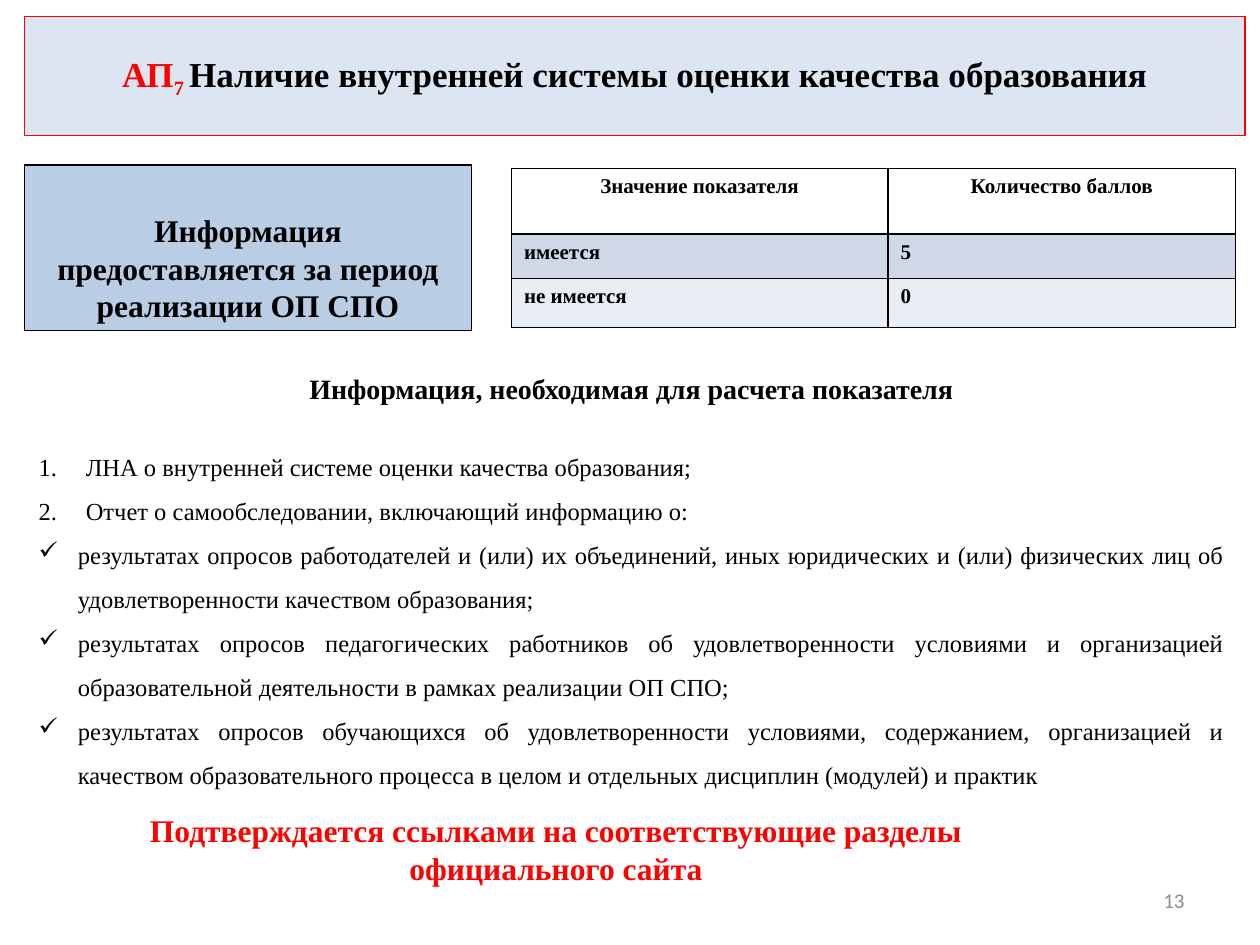
from dataclasses import dataclass
from typing import Any

from lxml import etree
from pptx import Presentation
from pptx import util as u
from pptx.dml.color import RGBColor
from pptx.enum import shapes, text
from pptx.oxml.ns import qn

LEFT, CENTER, RIGHT, JUSTIFY = (
    text.PP_ALIGN.LEFT, text.PP_ALIGN.CENTER, text.PP_ALIGN.RIGHT, text.PP_ALIGN.JUSTIFY)
TOP, MIDDLE, BOTTOM = (
    text.MSO_ANCHOR.TOP, text.MSO_ANCHOR.MIDDLE, text.MSO_ANCHOR.BOTTOM)
BLACK, RED = "000000", "FF0000"


def rgb(value):
    return RGBColor.from_string(value)


def write(p, words, *, size=14, bold=False, color=BLACK, font="Times New Roman",
          align=LEFT, baseline=None):
    """Add one formatted run to a paragraph; baseline is in percent."""
    p.alignment = align
    r = p.add_run()
    r.text = words
    r.font.size, r.font.bold, r.font.name = u.Pt(size), bold, font
    r.font.color.rgb = rgb(color)
    if baseline:
        r.font._element.set("baseline", str(baseline * 1000))


def add_bullet(p, mark, indent):
    """Hang the paragraph by indent cm; without a mark it is numbered."""
    pPr = p._p.get_or_add_pPr()
    pPr.set("marL", str(u.Cm(indent)))
    pPr.set("indent", str(-u.Cm(indent)))
    if mark:
        etree.SubElement(pPr, qn("a:buChar")).set("char", mark)
    else:
        etree.SubElement(pPr, qn("a:buAutoNum")).set("type", "arabicPeriod")


def add_borders(cell, color, width):
    tcPr = cell._tc.get_or_add_tcPr()
    for side in ("lnL", "lnR", "lnT", "lnB"):
        ln = etree.SubElement(tcPr, qn(f"a:{side}"))
        ln.set("w", str(u.Pt(width)))
        fill = etree.SubElement(ln, qn("a:solidFill"))
        etree.SubElement(fill, qn("a:srgbClr")).set("val", color)


def place(sp, box):
    sp.left, sp.top, sp.width, sp.height = (u.Cm(n) for n in box)


def set_frame(sp, anchor):
    tf = sp.text_frame
    tf.word_wrap = True
    tf.auto_size = text.MSO_AUTO_SIZE.NONE
    tf.vertical_anchor = anchor
    return tf


@dataclass
class SlideBuilder:
    s: Any
    line_width: float = 0.75
    list_size: int = 14
    list_spacing: float = 1.5

    def paint(self, sp, fill, line):
        sp.fill.solid()
        sp.fill.fore_color.rgb = rgb(fill)
        sp.line.color.rgb = rgb(line)
        sp.line.width = u.Pt(self.line_width)

    def title(self, box, fill, line, runs):
        sp = self.s.shapes.title
        place(sp, box)
        self.paint(sp, fill, line)
        p = set_frame(sp, MIDDLE).paragraphs[0]
        for words, fmt in runs:
            write(p, words, size=20, bold=True, align=CENTER, **fmt)

    def panel(self, box, fill, line, words, **fmt):
        sp = self.s.shapes.add_shape(
            shapes.MSO_SHAPE.RECTANGLE, *(u.Cm(n) for n in box))
        sp.shadow.inherit = False
        self.paint(sp, fill, line)
        write(set_frame(sp, BOTTOM).paragraphs[0], words, **fmt)

    def label(self, box, words, anchor=TOP, **fmt):
        sp = self.s.shapes.add_textbox(*(u.Cm(n) for n in box))
        tf = set_frame(sp, anchor)
        write(tf.paragraphs[0], words, **fmt)
        return tf

    def bullets(self, tf, items, indent, mark=None):
        for item in items:
            p = tf.add_paragraph()
            add_bullet(p, mark, indent)
            p.line_spacing = self.list_spacing
            write(p, item, size=self.list_size, align=JUSTIFY)

    def table(self, box, widths, heights, rows, fills):
        table = self.s.shapes.add_table(
            len(rows), len(widths), *(u.Cm(n) for n in box)).table
        for column, width in zip(table.columns, widths):
            column.width = u.Cm(width)
        for i, (row, values) in enumerate(zip(table.rows, rows)):
            row.height = u.Cm(heights[i])
            for cell, value in zip(row.cells, values):
                add_borders(cell, BLACK, 1)
                cell.fill.solid()
                cell.fill.fore_color.rgb = rgb(fills[i])
                write(cell.text_frame.paragraphs[0], value, size=12, bold=True,
                      align=LEFT if i else CENTER)


def main():
    prs = Presentation()
    prs.slide_width, prs.slide_height = u.Cm(25.4), u.Cm(19.05)
    slide = SlideBuilder(prs.slides.add_slide(prs.slide_layouts[5]))

    slide.title((0.5, 0.33, 24.6, 2.4), "DCE6F2", RED, [
        ("АП", {"color": RED}),
        ("7 ", {"color": RED, "baseline": -25}),
        ("Наличие внутренней системы оценки качества образования", {}),
    ])
    slide.panel((0.5, 3.33, 9, 3.33), "B9CDE5", BLACK,
                "Информация предоставляется за период реализации ОП СПО",
                size=18, bold=True, align=CENTER)
    slide.table((10.31, 3.4, 14.6, 3.2), (7.59, 7.01), (1.32, 0.89, 0.99),
                [("Значение показателя", "Количество баллов"),
                 ("имеется", "5"),
                 ("не имеется", "0")],
                ("FFFFFF", "D0D8E8", "E9EDF4"))

    tf = slide.label((0.53, 7.37, 24.4, 9.27),
                     "Информация, необходимая для расчета показателя",
                     size=16, bold=True, align=CENTER)
    tf.paragraphs[0].space_after = u.Pt(18)
    slide.bullets(tf, [
        "ЛНА о внутренней системе оценки качества образования;",
        "Отчет о самообследовании, включающий информацию о:",
    ], indent=0.95)
    slide.bullets(tf, [
        "результатах опросов работодателей и (или) их объединений, иных юридических "
        "и (или) физических лиц об удовлетворенности качеством образования;",
        "результатах опросов педагогических работников об удовлетворенности условиями "
        "и организацией образовательной деятельности в рамках реализации ОП СПО;",
        "результатах опросов обучающихся об удовлетворенности условиями, содержанием, "
        "организацией и качеством образовательного процесса в целом и отдельных "
        "дисциплин (модулей) и практик",
    ], indent=0.79, mark="✓")

    slide.label((2.31, 16.23, 17.8, 1.8),
                "Подтверждается ссылками на соответствующие разделы официального сайта",
                size=18, bold=True, color=RED, align=CENTER)
    slide.label((18.2, 17.65, 5.93, 1.01), "13", anchor=MIDDLE,
                size=12, color="8C8C8C", font="Calibri", align=RIGHT)
    prs.save("out.pptx")


if __name__ == "__main__":
    main()
